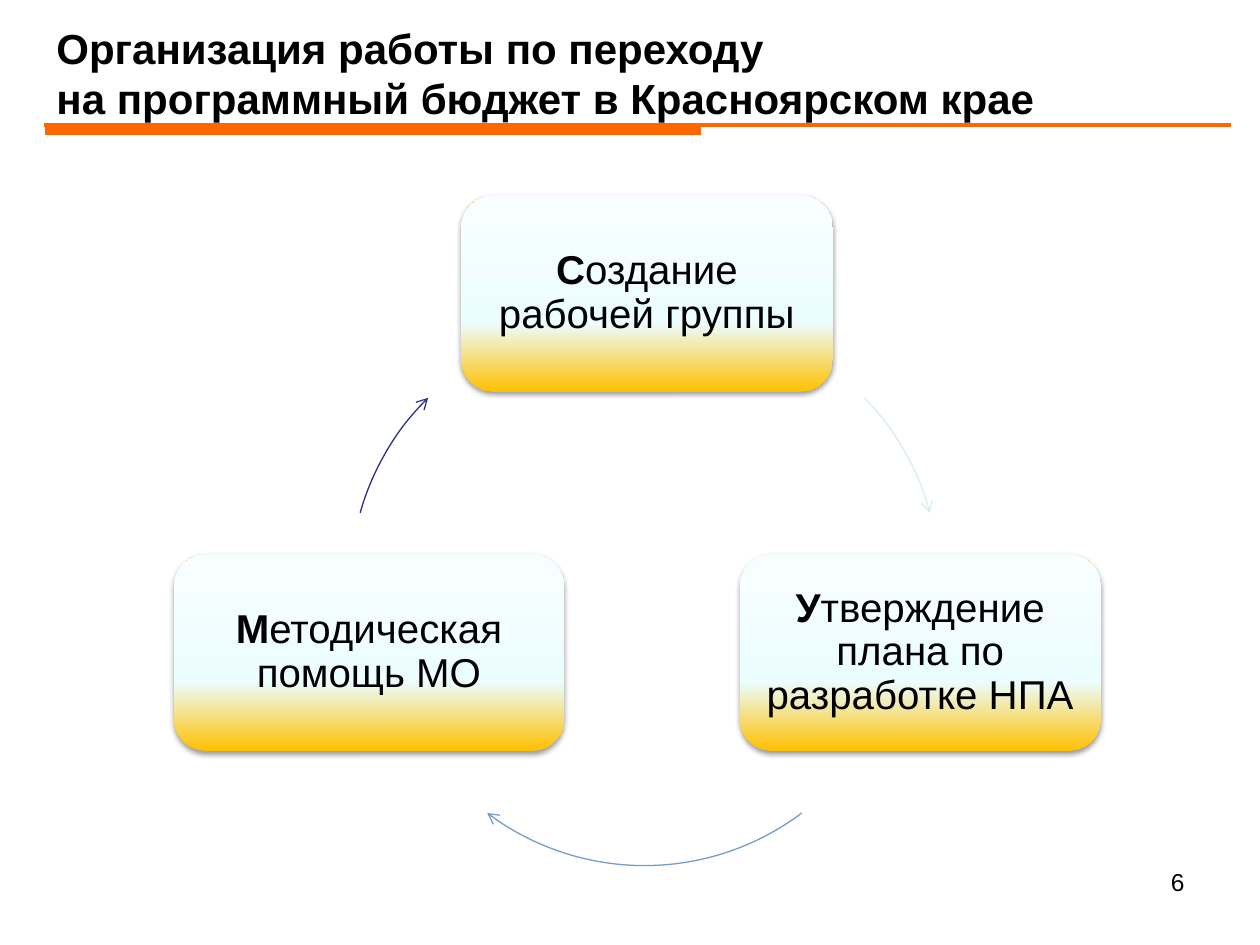
from copy import deepcopy
from dataclasses import dataclass

from lxml.etree import SubElement
from pptx import Presentation
from pptx.dml.color import RGBColor
from pptx.enum.shapes import MSO_CONNECTOR, MSO_SHAPE
from pptx.enum.text import MSO_ANCHOR, PP_ALIGN
from pptx.oxml import parse_xml
from pptx.oxml.ns import nsdecls, qn
from pptx.util import Inches, Pt


@dataclass(frozen=True)
class Theme:
    font: str = "Arial"
    ink: str = "000000"
    accent: str = "FF6600"
    step_gradient: tuple = ((0, "FFC000"), (0.35, "ECFDFF"), (1, "F8FEFF"))
    title_size: float = 24
    step_size: float = 23
    number_size: float = 14
    arrow_width: float = 0.75


THEME = Theme()


def style_run(run, size, bold=False):
    run.font.name = THEME.font
    run.font.size = Pt(size)
    run.font.bold = bold
    run.font.color.rgb = RGBColor.from_string(THEME.ink)


def add_text(slide, box, lines, size, bold=False, align=PP_ALIGN.LEFT):
    frame = slide.shapes.add_textbox(*map(Inches, box)).text_frame
    frame.word_wrap = True
    frame.text = "\n".join(lines)
    for paragraph in frame.paragraphs:
        paragraph.alignment = align
        for run in paragraph.runs:
            style_run(run, size, bold)


def add_rule(slide, left, right, y, width):
    rule = slide.shapes.add_connector(
        MSO_CONNECTOR.STRAIGHT, Inches(left), Inches(y), Inches(right), Inches(y))
    rule.line.color.rgb = RGBColor.from_string(THEME.accent)
    rule.line.width = Pt(width)
    SubElement(rule._element.spPr, qn("a:effectLst"))


def add_header(slide, box, lines):
    left, top, width, height = box
    add_rule(slide, left + 0.01, left + 5.21, top + 0.9, 6)
    add_rule(slide, left, left + 9.42, top + 0.86, 2.25)
    add_text(slide, box, lines, THEME.title_size, bold=True)


def add_step(slide, box, initial, rest):
    step = slide.shapes.add_shape(MSO_SHAPE.ROUNDED_RECTANGLE, *map(Inches, box))
    step.line.fill.background()
    step.fill.gradient()
    step.fill.gradient_angle = 90
    properties = step._element.spPr
    stops = properties.find(qn("a:gradFill")).find(qn("a:gsLst"))
    stops.append(deepcopy(stops[-1]))
    for stop, (position, color) in zip(step.fill.gradient_stops, THEME.step_gradient):
        stop.position = position
        stop.color.rgb = RGBColor.from_string(color)
    properties.append(parse_xml(
        f'<a:effectLst {nsdecls("a")}>'
        f'<a:outerShdw blurRad="{Pt(3.1)}" dist="{Pt(1.6)}" dir="5400000" rotWithShape="0">'
        f'<a:srgbClr val="{THEME.ink}"><a:alpha val="38000"/></a:srgbClr>'
        '</a:outerShdw></a:effectLst>'))

    frame = step.text_frame
    frame.word_wrap = True
    frame.vertical_anchor = MSO_ANCHOR.MIDDLE
    frame.margin_left = frame.margin_right = Inches(0.1)
    frame.margin_top = frame.margin_bottom = Inches(0.1)
    label = frame.paragraphs[0]
    label.alignment = PP_ALIGN.CENTER
    label.line_spacing = 0.9
    for text, bold in ((initial, True), (rest, False)):
        run = label.add_run()
        run.text = text
        style_run(run, THEME.step_size, bold)


def add_arc_arrow(slide, box, start, end, color):
    arrow = slide.shapes.add_shape(MSO_SHAPE.ARC, *map(Inches, box))
    for index, degrees in enumerate((start, end)):
        arrow.adjustments[index] = degrees * 0.6
    arrow.shadow.inherit = False
    arrow.fill.background()
    arrow.line.color.rgb = RGBColor.from_string(color)
    arrow.line.width = Pt(THEME.arrow_width)
    SubElement(arrow.line._get_or_add_ln(), qn("a:tailEnd"), type="arrow")


def add_cycle(slide, box):
    left, top, width, height = box
    step_height, diameter = 1.56, 4.15
    lower = height - step_height
    steps = (
        (2.28, 0, 2.95, "С", "оздание рабочей группы"),
        (4.49, lower, 2.87, "У", "тверждение плана по разработке НПА"),
        (0, lower, 3.1, "М", "етодическая помощь МО"),
    )
    arrows = (
        (1.92, 0.98, 315.8, 345.1, "DAEDEF"),
        (1.66, 1.17, 53, 127, "759CCB"),
        (1.4, 1.01, 195.8, 225.4, "2D2D8A"),
    )
    for (x, y, step_width, initial, rest), (arc_x, arc_y, start, end, color) in zip(steps, arrows):
        add_step(slide, (left + x, top + y, step_width, step_height), initial, rest)
        add_arc_arrow(slide, (left + arc_x, top + arc_y, diameter, diameter), start, end, color)


def main():
    deck = Presentation()
    deck.slide_width, deck.slide_height = Inches(10), Inches(7.5)
    slide = deck.slides.add_slide(deck.slide_layouts[6])
    add_header(slide, (0.35, 0.13, 9.37, 0.91), (
        "Организация работы по переходу",
        "на программный бюджет в Красноярском крае",
    ))
    add_text(slide, (7.17, 6.83, 2.33, 0.52), ("6",), THEME.number_size, align=PP_ALIGN.RIGHT)
    add_cycle(slide, (1.38, 1.55, 7.36, 4.41))
    deck.save("out.pptx")


if __name__ == "__main__":
    main()
